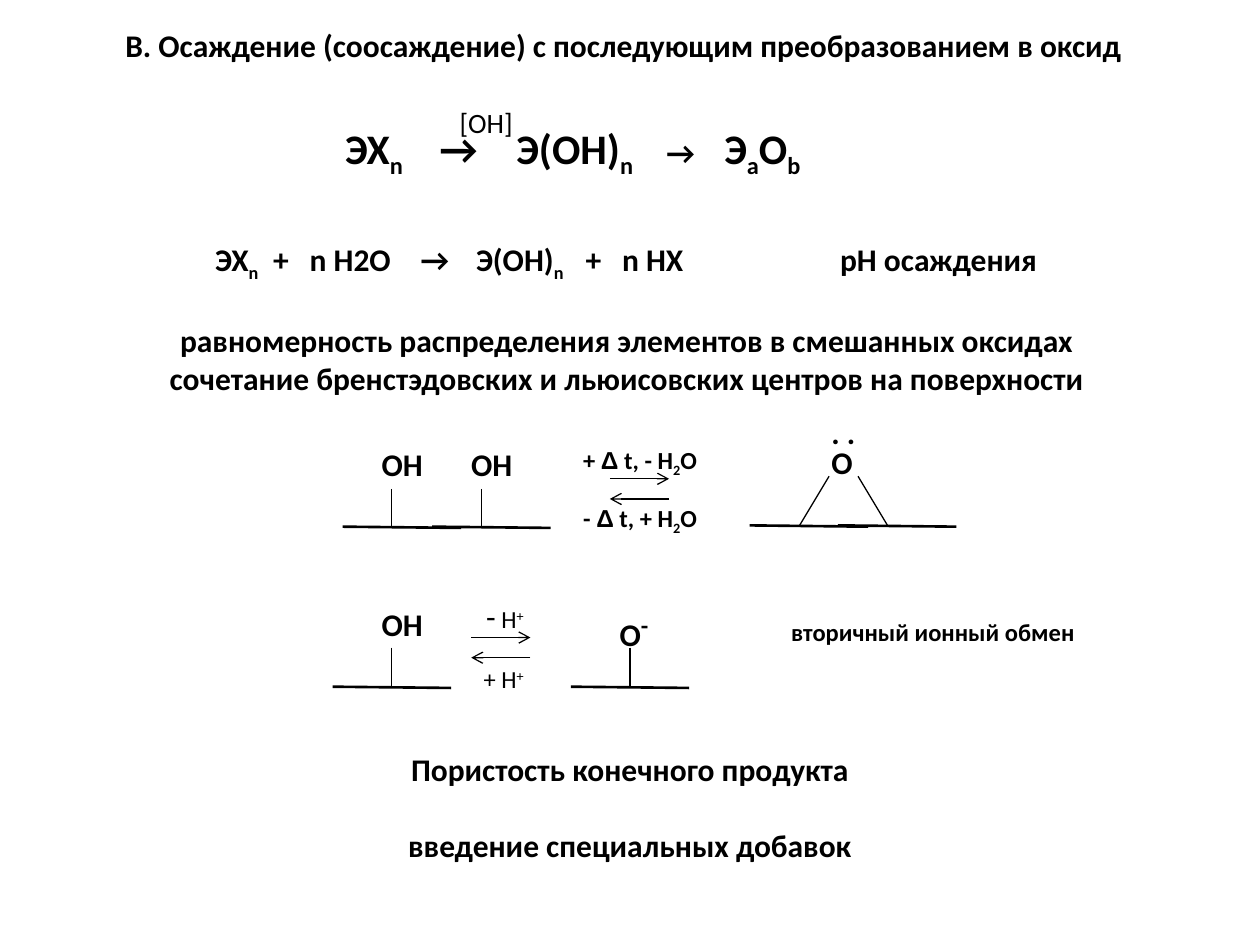
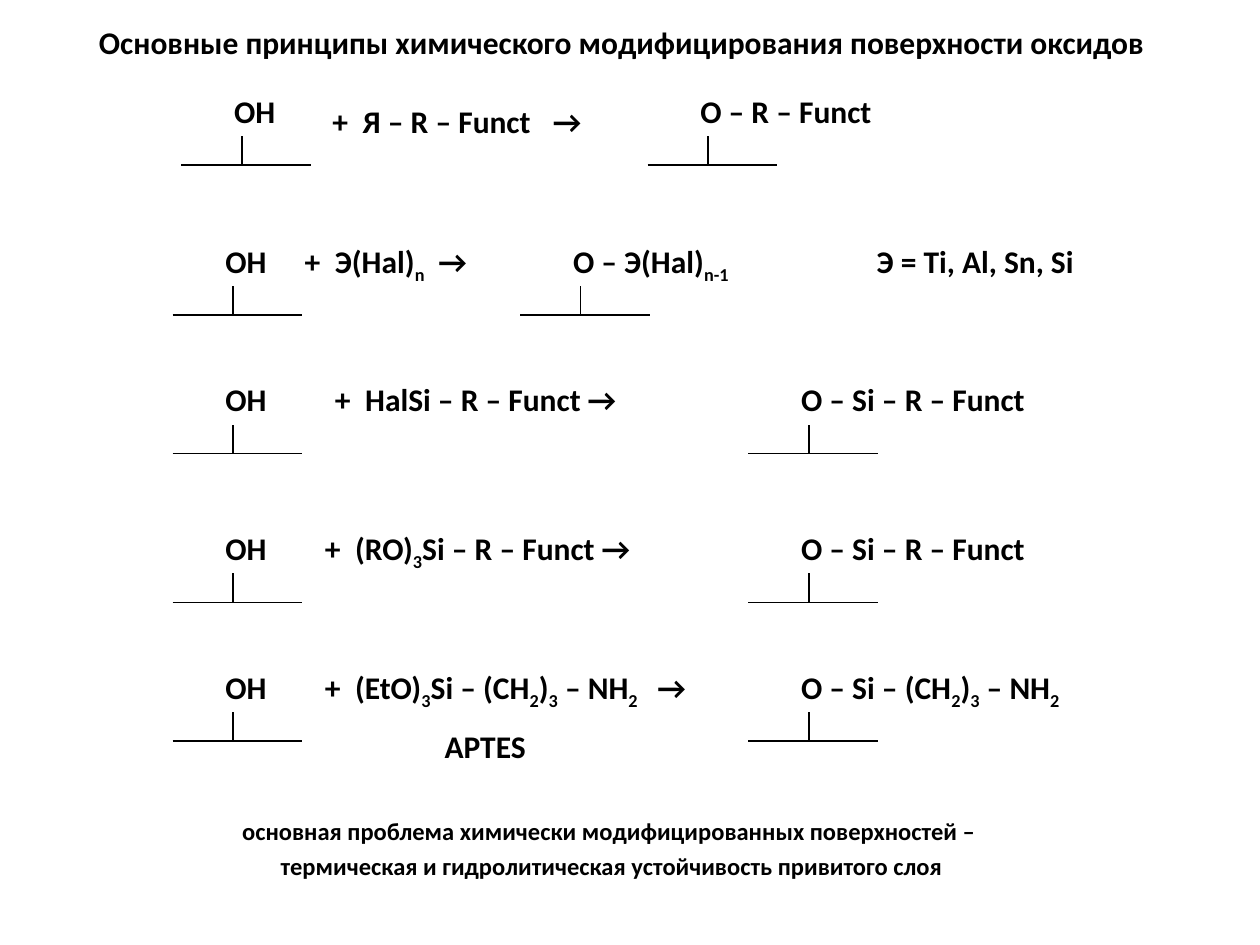
from dataclasses import dataclass

import lxml.etree
import pptx
import pptx.dml.color
import pptx.enum.shapes
import pptx.enum.text
import pptx.oxml.ns
import pptx.util
from pptx.util import Inches

INK = "000000"
FONT = "Calibri"
LINE_HEIGHT = 0.4
THIN, THICK = 0.75, 1.5
LEFT = pptx.enum.text.PP_ALIGN.LEFT
CENTER = pptx.enum.text.PP_ALIGN.CENTER


@dataclass
class Run:
    text: str
    size: float | None = None
    font: str = FONT
    baseline: int = 0


@dataclass
class Label:
    """Text block; each line is a formula string or a list of runs."""
    left: float
    top: float
    width: float
    lines: list
    size: float = 18
    bold: bool = True
    height: float = LINE_HEIGHT
    align: int = LEFT
    tabs: tuple = ()
    spacing: float = 1.0
    gap: float = 0


@dataclass
class Reaction:
    """A surface hydroxyl, the reagent added to it and the grafted product."""
    top: float
    hydroxyl: float
    reagent: Label
    product: Label


def color(value: str) -> pptx.dml.color.RGBColor:
    return pptx.dml.color.RGBColor.from_string(value)


def apply(target, values: dict) -> None:
    for name, value in values.items():
        setattr(target, name, value)


def formula(text: str) -> list[Run]:
    """Every second part between bars is a subscript, or a superscript after ^."""
    runs = []
    for index, part in enumerate(text.split("|")):
        baseline = 0
        if index % 2:
            baseline = 30 if part.startswith("^") else -25
        if part:
            runs.append(Run(part.removeprefix("^"), baseline=baseline))
    return runs


def set_tabs(paragraph, stops: tuple) -> None:
    qn = pptx.oxml.ns.qn
    tab_list = lxml.etree.SubElement(paragraph._p.get_or_add_pPr(), qn("a:tabLst"))
    for stop in stops:
        lxml.etree.SubElement(tab_list, qn("a:tab"), pos=str(Inches(stop)), algn="l")


def write(shape, label: Label) -> None:
    apply(shape, {
        "left": Inches(label.left), "top": Inches(label.top),
        "width": Inches(label.width), "height": Inches(label.height),
    })
    frame = shape.text_frame
    apply(frame, {
        "word_wrap": bool(label.tabs),
        "auto_size": pptx.enum.text.MSO_AUTO_SIZE.NONE,
        "vertical_anchor": pptx.enum.text.MSO_ANCHOR.TOP,
    })
    for index, line in enumerate(label.lines):
        paragraph = frame.add_paragraph() if index else frame.paragraphs[0]
        apply(paragraph, {
            "alignment": label.align,
            "line_spacing": label.spacing,
            "space_before": pptx.util.Pt(label.gap if index else 0),
        })
        if label.tabs:
            set_tabs(paragraph, label.tabs)
        for part in formula(line) if isinstance(line, str) else line:
            run = paragraph.add_run()
            run.text = part.text
            apply(run.font, {
                "name": part.font, "bold": label.bold,
                "size": pptx.util.Pt(part.size or label.size),
            })
            run.font.color.rgb = color(INK)
            if part.baseline:
                run._r.get_or_add_rPr().set("baseline", str(part.baseline * 1000))


def add_label(slide, label: Label) -> None:
    write(slide.shapes.add_textbox(0, 0, 0, 0), label)


def add_line(slide, x1: float, y1: float, x2: float, y2: float,
             weight: float = THIN, arrow: bool = False) -> None:
    line = slide.shapes.add_connector(
        pptx.enum.shapes.MSO_CONNECTOR.STRAIGHT, *map(Inches, (x1, y1, x2, y2)))
    line.line.width = pptx.util.Pt(weight)
    line.line.color.rgb = color(INK)
    properties = line.element.spPr
    qn = pptx.oxml.ns.qn
    if arrow:
        lxml.etree.SubElement(properties.get_or_add_ln(), qn("a:tailEnd"), type="arrow")
    lxml.etree.SubElement(properties, qn("a:effectLst"))


def add_equilibrium(slide, left: float, top: float) -> None:
    right = left + 0.47
    add_line(slide, left, top, right, top, arrow=True)
    add_line(slide, right, top + 0.16, left, top + 0.16, arrow=True)


def add_titled_slide(deck, title: Label):
    slide = deck.slides.add_slide(deck.slide_layouts[5])
    write(slide.shapes.title, title)
    return slide


def add_precipitation_slide(deck) -> None:
    slide = add_titled_slide(deck, Label(0.35, 0.16, 9.2, [
        "B. Осаждение (соосаждение) с последующим преобразованием в оксид"], align=CENTER))

    oxide_route = [*formula("ЭХ|n|\t→\tЭ(OH)|n|\t"), Run("→", 18), *formula("\tЭ|a|O|b|")]
    heating = [Run("+ "), Run("Δ", font="Arial"), *formula(" t, - H|2|O")]
    hydration = [Run("- "), Run("Δ", font="Arial"), *formula(" t, + H|2|O")]
    labels = [
        Label(2.64, 0.92, 4.62, [oxide_route], 24, height=0.5, tabs=(0.75, 1.36, 2.55, 3.01)),
        Label(3.55, 0.79, 0.66, ["[OH]"], 16, bold=False),
        Label(1.61, 1.86, 7, ["ЭХ|n|\t+\tn H2O\t→\tЭ(OH)|n|\t+\tn HX\tрН осаждения"],
              tabs=(0.46, 0.75, 1.63, 2.07, 2.94, 3.23, 4.96)),
        Label(0.63, 2.5, 8.69, [
            "равномерность распределения элементов в смешанных оксидах",
            "сочетание бренстэдовских и льюисовских центров на поверхности",
        ], height=0.7, align=CENTER),
        Label(6.5, 3.47, 0.4, ["О"]),
        Label(6.5, 3.23, 0.41, [". ."]),
        Label(4.53, 3.48, 1.19, [heating], 14),
        Label(4.53, 3.94, 1.19, [hydration], 14),
        Label(3.76, 4.69, 0.55, [[Run("-", 18), *formula(" Н|^+|")]], 14, bold=False),
        Label(3.74, 5.22, 0.58, ["+ Н|^+|"], 14, bold=False),
        Label(4.82, 4.75, 0.47, [[Run("О"), Run("-", 24, baseline=30)]]),
        Label(6.18, 4.85, 2.77, ["вторичный ионный обмен"], 14),
        Label(2.87, 5.9, 4.26, ["Пористость конечного продукта",
                                "введение специальных добавок"],
              height=1, align=CENTER, gap=22),
    ]
    hydroxyls = [(2.93, 3.48), (3.64, 3.48), (2.93, 4.75)]
    labels += [Label(left, top, 0.58, ["ОН"]) for left, top in hydroxyls]
    for label in labels:
        add_label(slide, label)

    surfaces = [(2.72, 4.18), (3.43, 4.18), (5.95, 4.17), (6.65, 4.17),
                (2.64, 5.45), (4.53, 5.45)]
    for left, top in surfaces:
        add_line(slide, left, top, left + 0.94, top + 0.01, THICK)
    for x, top in [(3.11, 3.88), (3.82, 3.88), (3.11, 5.14), (5, 5.14)]:
        add_line(slide, x, top, x, top + 0.31)
    for top_x, bottom_x in [(6.58, 6.34), (6.81, 7.05)]:
        add_line(slide, top_x, 3.78, bottom_x, 4.18)
    for left, top in [(4.84, 3.8), (3.74, 5.06)]:
        add_equilibrium(slide, left, top)


def add_bound_group(slide, group: Label) -> None:
    """Draw a group whose first atom is bonded to a piece of surface."""
    add_label(slide, group)
    base, stem = group.top + 0.63, group.left + 0.16
    add_line(slide, group.left - 0.32, base, group.left + 0.71, base)
    add_line(slide, stem, base, stem, base - 0.23)


def add_modification_slide(deck) -> None:
    slide = add_titled_slide(deck, Label(0.06, 0.13, 9.75, [
        "Основные принципы химического модифицирования поверхности оксидов"], align=CENTER))

    def reaction(top: float, reagent_left: float, reagent_width: float, reagent: str,
                 product_left: float, product_width: float, product: str,
                 arrow: tuple = (), hydroxyl: float = 1.69, drop: float = 0) -> Reaction:
        return Reaction(
            top, hydroxyl,
            Label(reagent_left, top + drop, reagent_width, [reagent], tabs=(0.24, *arrow)),
            Label(product_left, top, product_width, [product]))

    reactions = [
        reaction(0.68, 2.54, 2.89, "+\tЯ – R – Funct\t→", 5.46, 1.88, "O – R – Funct",
                 arrow=(1.75,), hydroxyl=1.76, drop=0.08),
        reaction(1.87, 2.32, 1.71, "+\tЭ(Hal)|n|\t→", 4.45, 1.66, "O – Э(Hal)|n-1|",
                 arrow=(1.06,)),
        reaction(2.97, 2.56, 2.85, "+\tHalSi – R – Funct →", 6.26, 2.33, "O – Si – R – Funct"),
        reaction(4.15, 2.48, 3.09, "+\t(RO)|3|Si – R – Funct →",
                 6.26, 2.4, "O – Si – R – Funct"),
        reaction(5.25, 2.48, 3.6, "+\t(EtO)|3|Si – (CH|2|)|3| – NH|2|\t→",
                 6.26, 2.7, "O – Si – (CH|2|)|3| – NH|2|", arrow=(2.64,)),
    ]
    for step in reactions:
        add_bound_group(slide, Label(step.hydroxyl, step.top, 0.58, ["OH"]))
        add_label(slide, step.reagent)
        add_bound_group(slide, step.product)

    add_label(slide, Label(6.86, 1.87, 2.18, ["Э = Ti, Al, Sn, Si"]))
    add_label(slide, Label(3.43, 5.72, 1.03, ["APTES"]))
    add_label(slide, Label(1.4, 6.38, 6.91, [
        "основная проблема химически модифицированных поверхностей – ",
        "термическая и гидролитическая устойчивость привитого слоя",
    ], 14, height=0.66, align=CENTER, spacing=1.2))


def main() -> None:
    deck = pptx.Presentation()
    apply(deck, {"slide_width": Inches(10), "slide_height": Inches(7.5)})
    add_precipitation_slide(deck)
    add_modification_slide(deck)
    deck.save("out.pptx")


if __name__ == "__main__":
    main()
